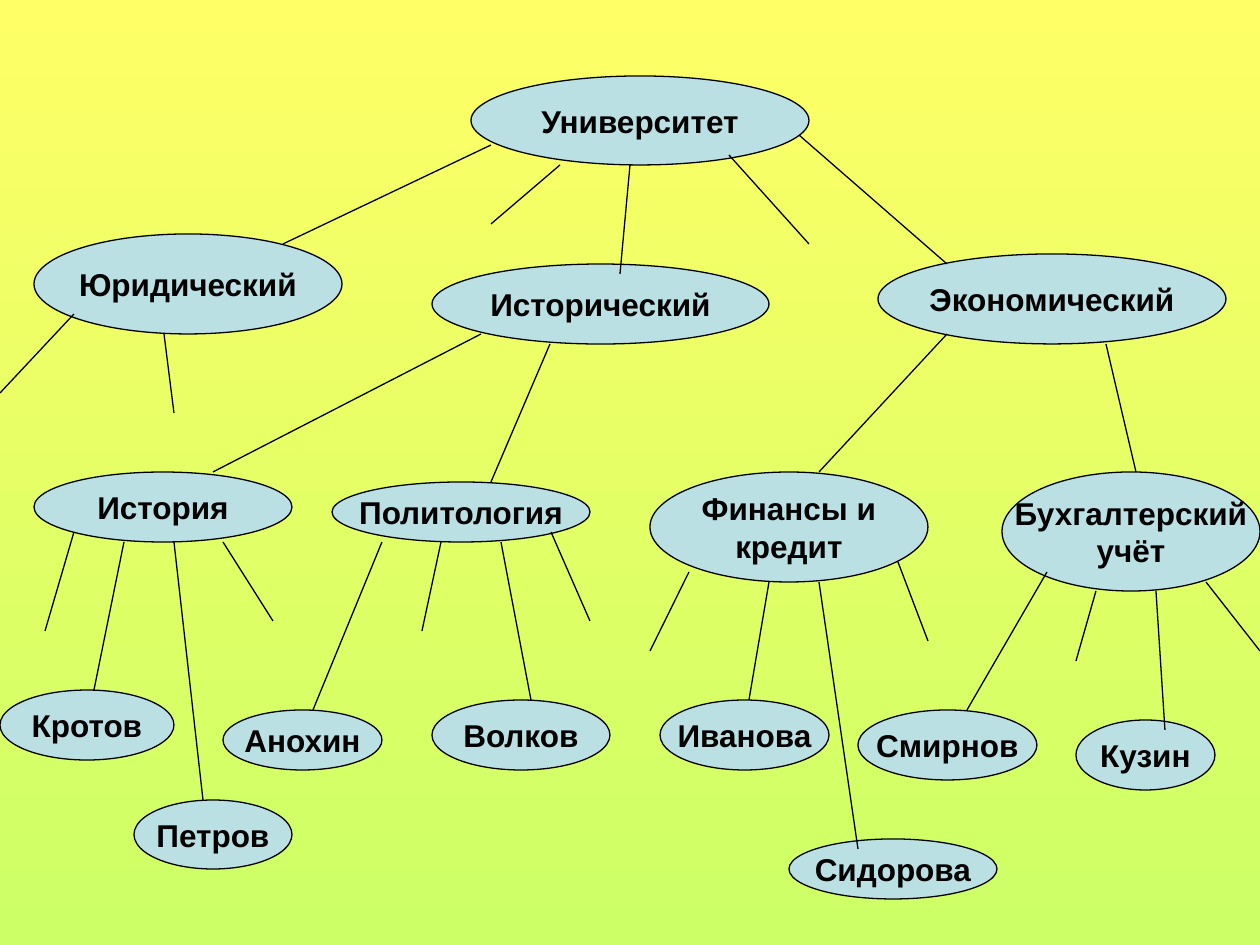
import pptx
import pptx.util
import pptx.dml.color
import pptx.enum.shapes
import pptx.enum.text
import pptx.oxml.ns
import lxml.etree

SCALE = 914400 / 126


def px(num):
    return pptx.util.Emu(round(num * SCALE))


def color(code):
    return pptx.dml.color.RGBColor.from_string(code)


def write(frame, text, font="Arial", size=18, bold=True, ink="000000"):
    """Fill a text frame with centred text, one paragraph per line."""
    frame.word_wrap = False
    frame.vertical_anchor = pptx.enum.text.MSO_ANCHOR.MIDDLE
    for i, line in enumerate(text.split("\n")):
        para = frame.add_paragraph() if i else frame.paragraphs[0]
        para.alignment = pptx.enum.text.PP_ALIGN.CENTER
        run = para.add_run()
        run.text = line
        run.font.name = font
        run.font.size = pptx.util.Pt(size)
        run.font.bold = bold
        run.font.color.rgb = color(ink)


class Chart:
    """Style of the tree and the slide it is drawn on."""
    fill = "BBE0E3"
    ink = "000000"
    width = 0.75

    def __init__(self, slide):
        self.slide = slide

    def back(self, top, end):
        """Paint a gradient that runs down the slide."""
        fill = self.slide.background.fill
        fill.gradient()
        fill.gradient_angle = 270
        for stop, code in zip(fill.gradient_stops, (top, end)):
            stop.color.rgb = color(code)

    def stroke(self, line):
        line.color.rgb = color(self.ink)
        line.width = pptx.util.Pt(self.width)

    def node(self, text, left, top, width, height):
        oval = self.slide.shapes.add_shape(
            pptx.enum.shapes.MSO_SHAPE.OVAL,
            px(left), px(top), px(width), px(height))
        oval.shadow.inherit = False
        oval.fill.solid()
        oval.fill.fore_color.rgb = color(self.fill)
        self.stroke(oval.line)
        write(oval.text_frame, text, ink=self.ink)

    def link(self, *ends):
        line = self.slide.shapes.add_connector(
            pptx.enum.shapes.MSO_CONNECTOR.STRAIGHT, *map(px, ends))
        self.stroke(line.line)
        lxml.etree.SubElement(line._element.spPr,
                              pptx.oxml.ns.qn("a:effectLst"))


NODES = [
    ("Университет", 471, 76, 338, 89),
    ("Юридический", 34, 234, 308, 100),
    ("Исторический", 432, 264, 337, 80),
    ("Экономический", 878, 254, 348, 90),
    ("История", 34, 472, 258, 70),
    ("Политология", 332, 482, 258, 60),
    ("Финансы и\nкредит", 650, 472, 278, 110),
    ("Бухгалтерский\nучёт", 1002, 472, 258, 119),
    ("Кротов", 0, 690, 174, 70),
    ("Анохин", 223, 710, 159, 60),
    ("Петров", 134, 800, 158, 69),
    ("Волков", 432, 700, 178, 70),
    ("Иванова", 660, 700, 169, 70),
    ("Смирнов", 858, 710, 179, 70),
    ("Кузин", 1076, 720, 139, 70),
    ("Сидорова", 789, 839, 208, 60),
]

LINKS = [
    # University to faculties
    (491, 145, 283, 244), (630, 165, 620, 274), (799, 135, 947, 264),
    (560, 165, 491, 224), (729, 155, 809, 244),
    # Faculties to departments
    (481, 334, 213, 472), (550, 344, 491, 482), (947, 334, 819, 472),
    (1106, 344, 1136, 472), (74, 314, 0, 393), (164, 334, 174, 413),
    # Departments to people
    (124, 542, 94, 690), (174, 542, 203, 800), (74, 532, 45, 631),
    (223, 542, 273, 621),
    (382, 542, 313, 710), (501, 542, 531, 700), (441, 542, 422, 631),
    (551, 532, 590, 621),
    (769, 582, 749, 700), (819, 582, 858, 849), (689, 572, 650, 651),
    (898, 562, 928, 641),
    (1047, 572, 967, 710), (1156, 591, 1165, 730), (1096, 591, 1076, 661),
    (1206, 582, 1260, 651),
]


def main():
    deck = pptx.Presentation()
    deck.slide_width, deck.slide_height = px(1260), px(945)
    chart = Chart(deck.slides.add_slide(deck.slide_layouts[6]))
    chart.back("FFFF66", "CCFF66")
    for node in NODES:
        chart.node(*node)
    for link in LINKS:
        chart.link(*link)
    deck.save("out.pptx")


if __name__ == "__main__":
    main()
